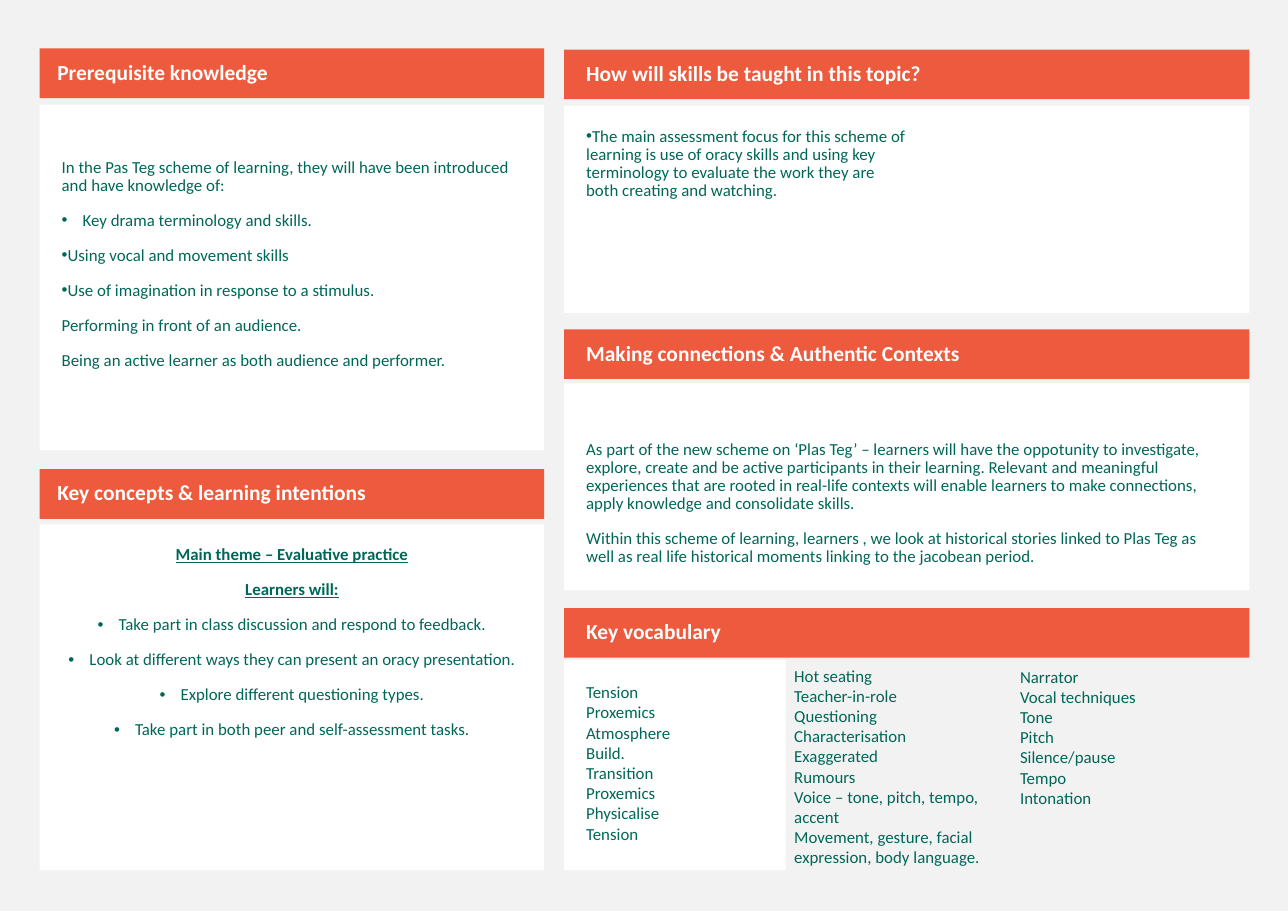
from dataclasses import dataclass

from lxml import etree
from pptx import Presentation
from pptx.dml.color import RGBColor
from pptx.enum.shapes import MSO_SHAPE
from pptx.enum.text import MSO_ANCHOR, PP_ALIGN
from pptx.oxml.ns import qn
from pptx.util import Pt

PX = 9144
RECTANGLE = MSO_SHAPE.RECTANGLE
TOP, MIDDLE = MSO_ANCHOR.TOP, MSO_ANCHOR.MIDDLE
LEFT, CENTER = PP_ALIGN.LEFT, PP_ALIGN.CENTER

GREY = RGBColor(0xF2, 0xF2, 0xF2)
ORANGE = RGBColor(0xED, 0x5A, 0x3E)
GREEN = RGBColor(0x00, 0x67, 0x58)
WHITE = RGBColor(0xFF, 0xFF, 0xFF)

HEADING_HEIGHT = 45
PADDING = 20
BULLET_INDENT = 19


@dataclass
class Line:
    text: str
    hang: int | None = None
    title: bool = False


PREREQUISITES = [
    Line("In the Pas Teg scheme of learning, they will have been introduced and have knowledge of:"),
    Line("Key drama terminology and skills.", BULLET_INDENT),
    Line("Using vocal and movement skills", 0),
    Line("Use of imagination in response to a stimulus.", 0),
    Line("Performing in front of an audience."),
    Line("Being an active learner as both audience and performer."),
]
CONCEPTS = [
    Line("Main theme – Evaluative practice", title=True),
    Line("Learners will:", title=True),
    Line("Take part in class discussion and respond to feedback.", BULLET_INDENT),
    Line("Look at different ways they can present an oracy presentation.", BULLET_INDENT),
    Line("Explore different questioning types.", BULLET_INDENT),
    Line("Take part in both peer and self-assessment tasks.", BULLET_INDENT),
]
SKILLS = [
    Line("The main assessment focus for this scheme of learning is use of oracy skills and using key "
         "terminology to evaluate the work they are both creating and watching.", 0),
]
CONNECTIONS = [
    Line("As part of the new scheme on ‘Plas Teg’ – learners will have the oppotunity to investigate, "
         "explore, create and be active participants in their learning. Relevant and meaningful "
         "experiences that are rooted in real-life contexts will enable learners to make connections, "
         "apply knowledge and consolidate skills."),
    Line("Within this scheme of learning, learners , we look at historical stories linked to Plas Teg "
         "as well as real life historical moments linking to the jacobean period."),
]
VOCABULARY = [
    ["Tension", "Proxemics", "Atmosphere", "Build.", "Transition", "Proxemics", "Physicalise", "Tension"],
    ["Hot seating", "Teacher-in-role", "Questioning", "Characterisation", "Exaggerated", "Rumours",
     "Voice – tone, pitch, tempo, accent", "Movement, gesture, facial expression, body language."],
    ["Narrator", "Vocal techniques", "Tone", "Pitch", "Silence/pause", "Tempo", "Intonation"],
]


def to_emu(box):
    return [length * PX for length in box]


def add_panel(slide, box, color):
    shape = slide.shapes.add_shape(RECTANGLE, *to_emu(box))
    shape.shadow.inherit = False
    shape.fill.solid()
    shape.fill.fore_color.rgb = color
    shape.line.fill.background()
    return shape


def set_frame(text_frame, insets, anchor=TOP):
    text_frame.word_wrap = True
    text_frame.vertical_anchor = anchor
    (text_frame.margin_left, text_frame.margin_top,
     text_frame.margin_right, text_frame.margin_bottom) = to_emu(insets)


def add_bullet(paragraph, hang):
    properties = paragraph._p.get_or_add_pPr()
    properties.set("marL", str(hang * PX))
    properties.set("indent", str(-hang * PX))
    etree.SubElement(properties, qn("a:buFont")).set("typeface", "Arial")
    etree.SubElement(properties, qn("a:buChar")).set("char", "•")


def write_lines(text_frame, lines, size=11, color=GREEN, align=LEFT, spaced=True):
    text_frame.text = "\n".join(line.text for line in lines)
    for index, (paragraph, line) in enumerate(zip(text_frame.paragraphs, lines)):
        paragraph.alignment = align
        if spaced:
            paragraph.line_spacing = 0.9
            paragraph.space_before = Pt(11 if index else 0)
        if line.hang is not None:
            add_bullet(paragraph, line.hang)
        for run in paragraph.runs:
            run.font.name = "Calibri"
            run.font.size = Pt(size)
            run.font.color.rgb = color
            run.font.bold = line.title
            run.font.underline = line.title and color == GREEN


def draw_heading(slide, box, title, inset):
    left, top, width, _ = box
    text_frame = add_panel(slide, (left, top, width, HEADING_HEIGHT), ORANGE).text_frame
    set_frame(text_frame, (inset, 5, 10, 5), MIDDLE)
    write_lines(text_frame, [Line(title, title=True)], 14, WHITE)


def draw_section(slide, box, title, lines, gap, heading_inset=PADDING, text_top=PADDING,
                 align=LEFT, columns=1):
    draw_heading(slide, box, title, heading_inset)
    left, top, width, height = box
    offset = HEADING_HEIGHT + gap
    text_frame = add_panel(slide, (left, top + offset, width, height - offset), WHITE).text_frame
    set_frame(text_frame, (PADDING, text_top, PADDING, PADDING))
    if columns > 1:
        text_frame._txBody.bodyPr.set("numCol", str(columns))
    write_lines(text_frame, lines, align=align)


def draw_vocabulary(slide, box, title, columns):
    draw_heading(slide, box, title, PADDING)
    left, top, _, height = box
    offset = HEADING_HEIGHT + 2
    body_top, body_height = top + offset, height - offset
    first, second, third = [[Line(word) for word in words] for words in columns]

    panel = add_panel(slide, (left, body_top, 201, body_height), WHITE)
    set_frame(panel.text_frame, [PADDING] * 4)
    write_lines(panel.text_frame, first, spaced=False)

    for lines, text_box in (
        (second, (left + 199, body_top, 221, 195)),
        (third, (left + 404, body_top + 1, 300, 140)),
    ):
        text_frame = slide.shapes.add_textbox(*to_emu(text_box)).text_frame
        set_frame(text_frame, (10, 5, 10, 5))
        write_lines(text_frame, lines, spaced=False)


def main():
    presentation = Presentation()
    presentation.slide_width, presentation.slide_height = to_emu((1169, 827))
    slide = presentation.slides.add_slide(presentation.slide_layouts[6])
    slide.background.fill.solid()
    slide.background.fill.fore_color.rgb = GREY

    draw_section(slide, (36, 44, 458, 365), "Prerequisite knowledge", PREREQUISITES,
                 gap=6, heading_inset=16, text_top=49)
    draw_section(slide, (36, 426, 458, 364), "Key concepts & learning intentions", CONCEPTS,
                 gap=5, heading_inset=16, align=CENTER)
    draw_section(slide, (512, 45, 622, 239), "How will skills be taught in this topic?", SKILLS,
                 gap=6, columns=2)
    draw_section(slide, (512, 299, 622, 237), "Making connections & Authentic Contexts", CONNECTIONS,
                 gap=4, text_top=52)
    draw_vocabulary(slide, (512, 552, 622, 238), "Key vocabulary", VOCABULARY)
    presentation.save("out.pptx")


if __name__ == "__main__":
    main()
